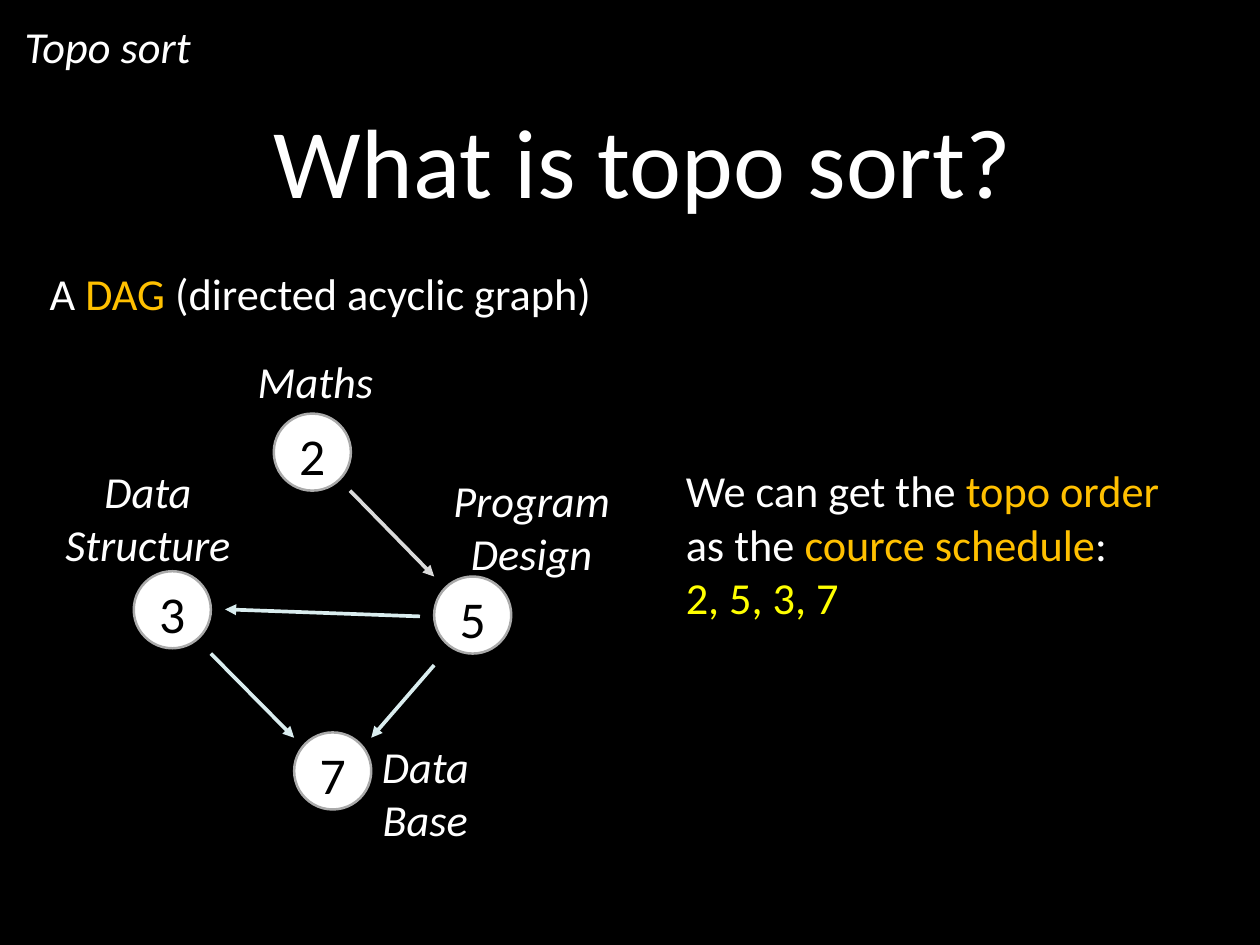
from lxml import etree
from pptx import Presentation
from pptx.dml.color import RGBColor
from pptx.enum.shapes import MSO_CONNECTOR, MSO_SHAPE
from pptx.enum.text import MSO_ANCHOR, PP_ALIGN
from pptx.oxml.ns import qn
from pptx.util import Inches, Pt

LEFT, CENTER = PP_ALIGN.LEFT, PP_ALIGN.CENTER
MIDDLE = MSO_ANCHOR.MIDDLE
OVAL, STRAIGHT = MSO_SHAPE.OVAL, MSO_CONNECTOR.STRAIGHT

THEME = {
    "font": "Calibri",
    "background": "000000", "text": "FFFFFF", "term": "FFC000", "order": "FFFF00",
    "node": "FFFFFF", "node_rim": "AAAAAA", "node_text": "000000",
    "first_edge": "DADADA", "edge": "DAEDEF",
    "title": 80, "body": 36, "number": 42,
    "rim_width": 2, "edge_width": 3,
}

BODY_INSETS = (0.41, 0.06, 0.06, 0.06)
ORDER_INSETS = (0.41, 0.06, 0.06, 0.67)
LABEL_INSETS = (0.1, 0.05, 0.1, 0.05)
NARROW_INSETS = (0.2, 0.05, 0.2, 0.05)
NODE_INSETS = (0, 0.06, 0, 0)

TITLE = [[("What is topo sort?", "text")]]
DEFINITION = [[("A ", "text"), ("DAG", "term"), (" (directed acyclic graph)", "text")]]
SCHEDULE = [
    [("We can get the ", "text"), ("topo order ", "term"), ("as the ", "text"),
     ("cource schedule", "term"), (":", "text")],
    [("2, 5, 3, 7", "order")],
]
PASSAGES = [
    (TITLE, (0.9, -1.08, 12.36, 5.75), "title", CENTER, BODY_INSETS),
    (SCHEDULE, (7.33, 3.25, 6.36, 6.38), "body", LEFT, ORDER_INSETS),
    (DEFINITION, (0.15, 1.94, 7.49, 2.72), "body", LEFT, BODY_INSETS),
]

LABELS = [
    ("Topo sort", (0.18, 0.02, 9.01, 1), LEFT, LABEL_INSETS),
    ("Maths", (2.81, 3.8, 1.65, 1), LEFT, LABEL_INSETS),
    ("Program Design", (4.88, 5.44, 2.24, 1), CENTER, LABEL_INSETS),
    ("Data Structure", (0.55, 5.34, 2.24, 1), CENTER, LABEL_INSETS),
    ("Data Base", (3.68, 8.45, 2.24, 1), CENTER, NARROW_INSETS),
]

NODE_SIZE = 0.87
NODES = {"2": (3.09, 4.67), "3": (1.51, 6.45), "5": (4.9, 6.51), "7": (3.32, 8.27)}
EDGES = [
    ((3.95, 5.54), (4.9, 6.51), "first_edge"),
    ((4.74, 6.96), (2.54, 6.88), "edge"),
    ((2.38, 7.38), (3.32, 8.33), "edge"),
    ((4.9, 7.51), (4.19, 8.33), "edge"),
]


def color(role):
    return RGBColor.from_string(THEME[role])


def apply(target, values):
    for name, value in values.items():
        setattr(target, name, value)


def write(shape, paragraphs, size, align, insets, italic=False):
    frame = shape.text_frame
    left, top, right, bottom = map(Inches, insets)
    apply(frame, {"word_wrap": True, "vertical_anchor": MIDDLE,
                  "margin_left": left, "margin_top": top,
                  "margin_right": right, "margin_bottom": bottom})
    for index, runs in enumerate(paragraphs):
        paragraph = frame.paragraphs[0] if index == 0 else frame.add_paragraph()
        paragraph.alignment = align
        for text, role in runs:
            run = paragraph.add_run()
            run.text = text
            apply(run.font, {"name": THEME["font"], "size": Pt(THEME[size]), "italic": italic})
            run.font.color.rgb = color(role)


def add_node(slide, number, corner):
    node = slide.shapes.add_shape(OVAL, *map(Inches, (*corner, NODE_SIZE, NODE_SIZE)))
    node.shadow.inherit = False
    node.fill.solid()
    node.fill.fore_color.rgb = color("node")
    node.line.color.rgb = color("node_rim")
    node.line.width = Pt(THEME["rim_width"])
    write(node, [[(number, "node_text")]], "number", CENTER, NODE_INSETS)


def add_edge(slide, start, end, role):
    edge = slide.shapes.add_connector(STRAIGHT, *map(Inches, (*start, *end)))
    edge.line.color.rgb = color(role)
    edge.line.width = Pt(THEME["edge_width"])
    etree.SubElement(edge.line._get_or_add_ln(), qn("a:tailEnd"), type="triangle")
    etree.SubElement(edge._element.spPr, qn("a:effectLst"))


def main():
    deck = Presentation()
    apply(deck, {"slide_width": Inches(14.22), "slide_height": Inches(10.67)})
    slide = deck.slides.add_slide(deck.slide_layouts[6])
    slide.background.fill.solid()
    slide.background.fill.fore_color.rgb = color("background")

    for number, corner in NODES.items():
        add_node(slide, number, corner)
    for start, end, role in EDGES:
        add_edge(slide, start, end, role)
    for paragraphs, place, size, align, insets in PASSAGES:
        passage = slide.shapes.add_textbox(*map(Inches, place))
        write(passage, paragraphs, size, align, insets)
    for text, place, align, insets in LABELS:
        label = slide.shapes.add_textbox(*map(Inches, place))
        write(label, [[(text, "text")]], "body", align, insets, italic=True)

    deck.save("out.pptx")


if __name__ == "__main__":
    main()
